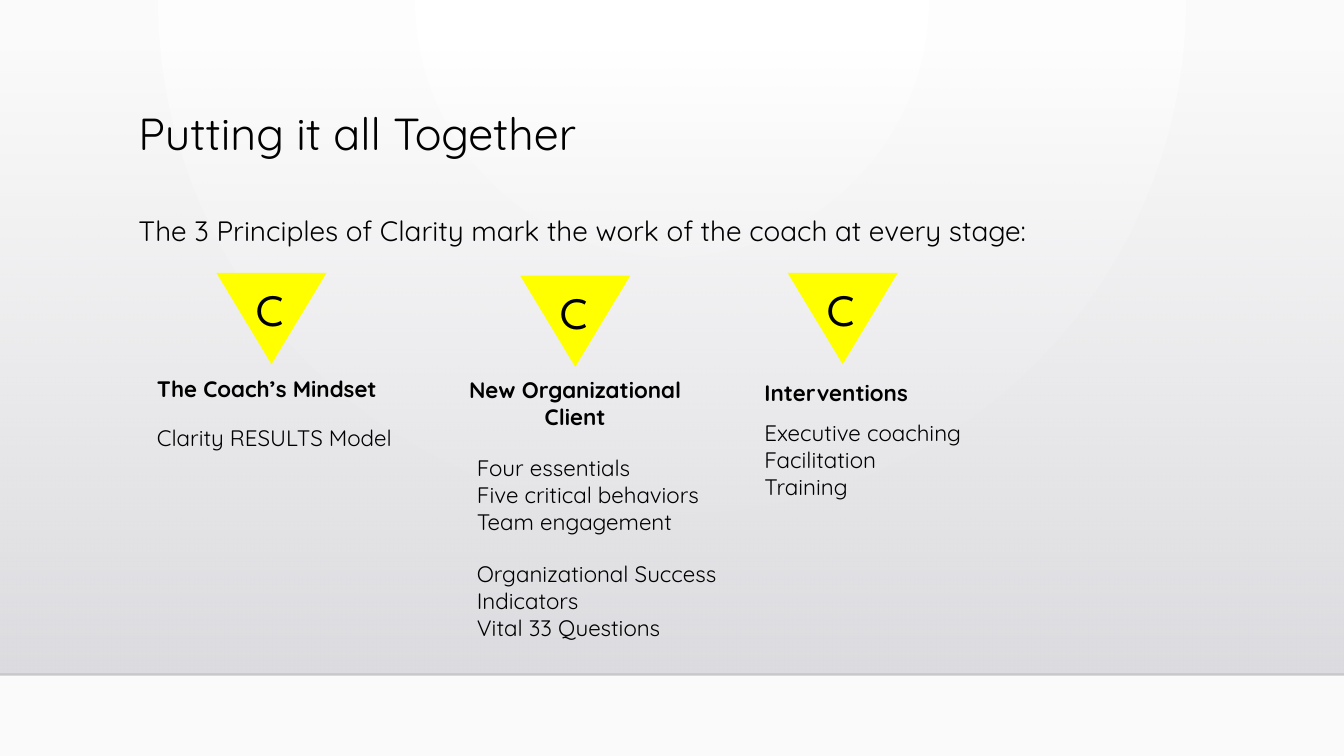
from lxml import etree
from pptx import Presentation
from pptx.dml.color import RGBColor
from pptx.enum.shapes import MSO_CONNECTOR, MSO_SHAPE
from pptx.enum.text import MSO_ANCHOR, MSO_AUTO_SIZE, PP_ALIGN
from pptx.oxml.ns import qn
from pptx.util import Inches, Pt

LEFT, CENTER = PP_ALIGN.LEFT, PP_ALIGN.CENTER
TOP, NO_FIT = MSO_ANCHOR.TOP, MSO_AUTO_SIZE.NONE
TRIANGLE, RECTANGLE = MSO_SHAPE.ISOSCELES_TRIANGLE, MSO_SHAPE.RECTANGLE
STRAIGHT = MSO_CONNECTOR.STRAIGHT

COLORS = {
    "text": "000000", "marker": "FFFF00", "floor_line": "000001",
    "glow": "FFFFFF", "edge": "FAFAFA",
    "shade_top": "DCDCE0", "shade_bottom": "DEDEE2",
}
BODY_FONT, MARKER_FONT = "Quicksand", "League Spartan"

# Content
TITLE = "Putting it all Together"
INTRO = "The 3 Principles of Clarity mark the work of the coach at every stage:"
MARKER_LETTER = "C"
MARKERS = [(1.61, 2.03), (3.87, 2.05), (5.86, 2.03)]
# left, top, height, lines, format
TEXTS = [
    (1.07, 2.74, 0.3, ["The Coach’s Mindset"], {"bold": True}),
    (1.07, 3.11, 0.3, ["Clarity RESULTS Model"], {}),
    (3.21, 2.75, 0.5, ["New Organizational", "Client"],
     {"bold": True, "align": CENTER}),
    (3.45, 3.33, 0.71,
     ["Four essentials", "Five critical behaviors", "Team engagement"], {}),
    (3.45, 4.12, 0.71,
     ["Organizational Success Indicators", "Vital 33 Questions"], {}),
    (5.59, 2.77, 0.3, ["Interventions"], {"bold": True}),
    (5.59, 3.07, 0.71, ["Executive coaching", "Facilitation", "Training"], {}),
]
TEXT_WIDTH = 2.14
SLIDE_WIDTH = 10
SLIDE_HEIGHT = SLIDE_WIDTH * 9 / 16
FLOOR = 5.02


def place(shape, left, top, width, height):
    shape.left, shape.top = Inches(left), Inches(top)
    shape.width, shape.height = Inches(width), Inches(height)


def write(shape, lines, size=12, font=BODY_FONT, bold=False, align=LEFT,
          line_spacing=None, plain=False):
    frame = shape.text_frame
    frame.word_wrap = True
    frame.auto_size = NO_FIT
    frame.vertical_anchor = TOP
    frame.text = "\n".join(lines)
    for paragraph in frame.paragraphs:
        if plain:  # no bullet, no indent
            properties = paragraph._p.get_or_add_pPr()
            properties.set("marL", "0")
            properties.set("indent", "0")
            etree.SubElement(properties, qn("a:buNone"))
        paragraph.alignment = align
        paragraph.space_before = Pt(0)
        if line_spacing:
            paragraph.line_spacing = line_spacing
        paragraph.font.size = Pt(size)
        paragraph.font.name = font
        paragraph.font.bold = bold
        paragraph.font.color.rgb = RGBColor.from_string(COLORS["text"])


def add_alpha(color, percent):
    etree.SubElement(color, qn("a:alpha"), val=str(percent * 1000))


def set_gradient(gradient, start, end, start_alpha=100):
    """Set two stops and return the element, stripped of its direction."""
    for child in list(gradient):
        gradient.remove(child)
    stops = etree.SubElement(gradient, qn("a:gsLst"))
    for position, name, alpha in ((0, start, start_alpha), (100, end, 100)):
        stop = etree.SubElement(stops, qn("a:gs"), pos=str(position * 1000))
        color = etree.SubElement(stop, qn("a:srgbClr"), val=COLORS[name])
        if alpha < 100:
            add_alpha(color, alpha)
    return gradient


presentation = Presentation()
presentation.slide_width = Inches(SLIDE_WIDTH)
presentation.slide_height = Inches(SLIDE_HEIGHT)
slide = presentation.slides.add_slide(presentation.slide_layouts[1])
shapes = slide.shapes
title, intro = shapes.title, slide.placeholders[1]

# Background: round glow from the top
slide.background.fill.gradient()
glow = set_gradient(next(slide.element.iter(qn("a:gradFill"))), "glow", "edge")
circle = etree.SubElement(glow, qn("a:path"), {"path": "circle"})
etree.SubElement(circle, qn("a:fillToRect"), l="43000", t="0", r="43000", b="100000")

# Wall shade and floor line
wall = shapes.add_shape(RECTANGLE, 0, Inches(0.38), Inches(SLIDE_WIDTH), Inches(4.63))
wall.shadow.inherit = False
wall.line.fill.background()
wall.fill.gradient()
shade = set_gradient(next(wall.element.iter(qn("a:gradFill"))),
                     "shade_top", "shade_bottom", start_alpha=0)
etree.SubElement(shade, qn("a:lin"), ang="5400000", scaled="0")

floor_line = shapes.add_connector(
    STRAIGHT, 0, Inches(FLOOR), Inches(SLIDE_WIDTH), Inches(FLOOR))
floor_line.line.width = Pt(1)
floor_line.line.color.rgb = RGBColor.from_string(COLORS["floor_line"])
add_alpha(next(floor_line.element.iter(qn("a:srgbClr"))), 20)
etree.SubElement(floor_line.element.spPr, qn("a:effectLst"))

# Title and intro, brought in front of the wall
place(title, 0.93, 0.78, 7.88, 0.86)
write(title, [TITLE], size=24, line_spacing=0.9)
place(intro, 0.93, 1.49, 7.88, 0.54)
write(intro, [INTRO], size=15, line_spacing=1.2, plain=True)
for placeholder in (title, intro):
    placeholder.element.getparent().append(placeholder.element)

# Triangle markers
for left, top in MARKERS:
    marker = shapes.add_group_shape()
    triangle = marker.shapes.add_shape(
        TRIANGLE, Inches(left), Inches(top), Inches(0.82), Inches(0.68))
    triangle.rotation = 180
    triangle.shadow.inherit = False
    triangle.fill.solid()
    triangle.fill.fore_color.rgb = RGBColor.from_string(COLORS["marker"])
    triangle.line.fill.background()
    letter = marker.shapes.add_textbox(
        Inches(left + 0.2), Inches(top + 0.02), Inches(0.54), Inches(0.44))
    write(letter, [MARKER_LETTER], size=24, font=MARKER_FONT)

# Column headings and lists
for left, top, height, lines, text_format in TEXTS:
    box = shapes.add_textbox(
        Inches(left), Inches(top), Inches(TEXT_WIDTH), Inches(height))
    write(box, lines, **text_format)

presentation.save("out.pptx")
